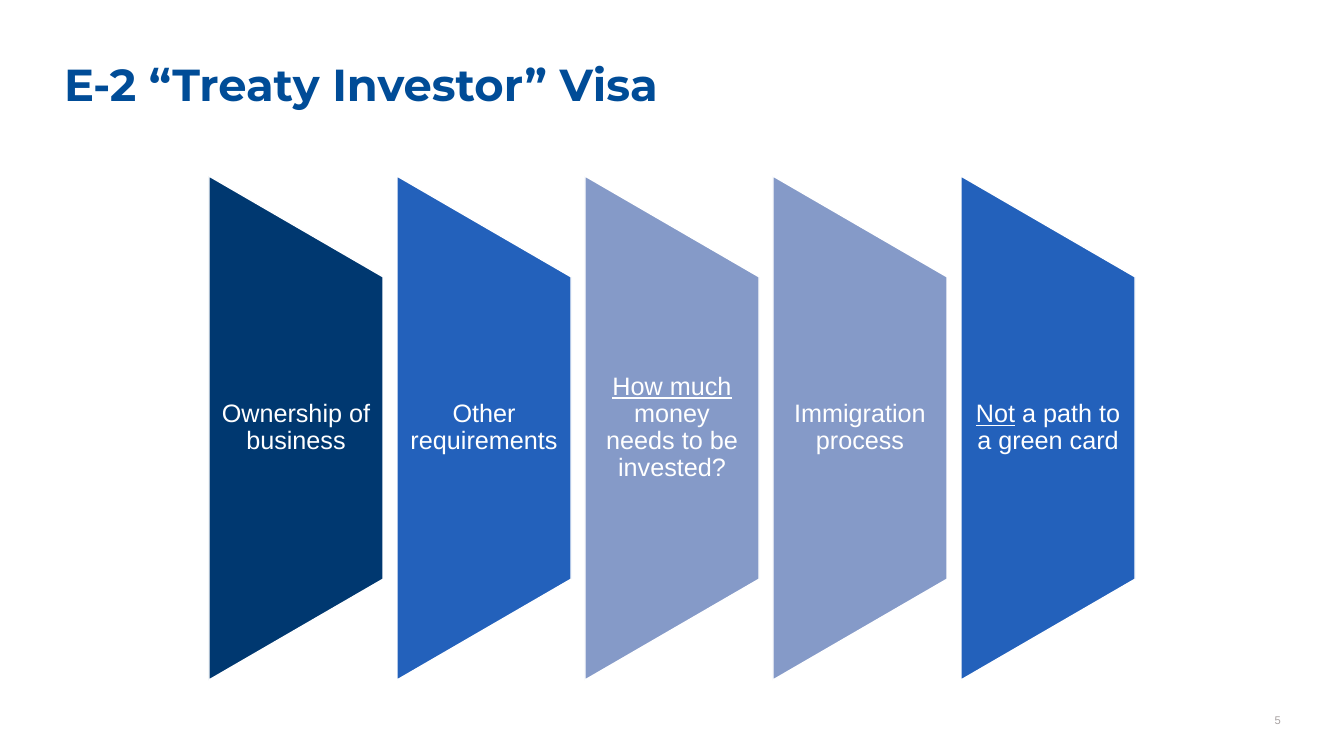
from pptx import Presentation
from pptx.dml.color import RGBColor
from pptx.enum.shapes import MSO_SHAPE
from pptx.enum.text import MSO_ANCHOR, MSO_AUTO_SIZE, PP_ALIGN
from pptx.util import Emu, Pt

PANEL = MSO_SHAPE.FLOWCHART_MANUAL_OPERATION
TOP, MIDDLE = MSO_ANCHOR.TOP, MSO_ANCHOR.MIDDLE
LEFT, CENTER, RIGHT = PP_ALIGN.LEFT, PP_ALIGN.CENTER, PP_ALIGN.RIGHT
NO_FIT = MSO_AUTO_SIZE.NONE

WHITE = RGBColor(0xFF, 0xFF, 0xFF)
NAVY = RGBColor(0x00, 0x38, 0x70)
BLUE = RGBColor(0x23, 0x61, 0xBB)
PALE = RGBColor(0x85, 0x9A, 0xC8)
TITLE = RGBColor(0x00, 0x4C, 0x97)
GRAY = RGBColor(0xA8, 0xA2, 0xA2)


def px(n):
    return Emu(round(n * 12192000 / 1344))


def write(shape, runs, size, color, align, anchor=TOP, side=0,
          font="Arial", bold=False, spacing=1.0):
    frame = shape.text_frame
    frame.word_wrap = True
    frame.auto_size = NO_FIT
    frame.vertical_anchor = anchor
    frame.margin_left = frame.margin_right = px(side)
    frame.margin_top = frame.margin_bottom = 0
    para = frame.paragraphs[0]
    para.alignment = align
    para.line_spacing = spacing
    for text, under in runs:
        run = para.add_run()
        run.text = text
        run.font.name = font
        run.font.size = Pt(size)
        run.font.bold = bold
        run.font.underline = under
        run.font.color.rgb = color


deck = Presentation()
deck.slide_width, deck.slide_height = px(1344), px(756)
slide = deck.slides.add_slide(deck.slide_layouts[5])
shapes = slide.shapes

# Title
title = shapes.title
title.left, title.top = px(64), px(63)
title.width, title.height = px(1217), px(50)
write(title, [("E-2 “Treaty Investor” Visa", False)], 32, TITLE, LEFT,
      font="Montserrat", bold=True, spacing=0.9)

# Panels: each is a wide shape turned upright, with level text on top
topics = [
    (NAVY, [("Ownership of business", False)]),
    (BLUE, [("Other requirements", False)]),
    (PALE, [("How much", True), (" money needs to be invested?", False)]),
    (PALE, [("Immigration process", False)]),
    (BLUE, [("Not", True), (" a path to a green card", False)]),
]
WIDE, TALL, STEP = 174, 504, 188
FIRST, MID, TEXT = 209, 428, 302

for i, (color, runs) in enumerate(topics):
    left = FIRST + i * STEP
    panel = shapes.add_shape(PANEL, px(left + (WIDE - TALL) // 2),
                             px(MID - WIDE // 2), px(TALL), px(WIDE))
    panel.rotation = 270
    panel.shadow.inherit = False
    panel.fill.solid()
    panel.fill.fore_color.rgb = color
    panel.line.color.rgb = WHITE
    panel.line.width = Pt(1)
    label = shapes.add_textbox(px(left), px(MID - TEXT // 2), px(WIDE), px(TEXT))
    write(label, runs, 18, WHITE, CENTER, MIDDLE, side=12, spacing=0.9)

# Page number
page = shapes.add_textbox(px(1209), px(713), px(72), px(20))
write(page, [("5", False)], 8, GRAY, RIGHT)

deck.save("out.pptx")
